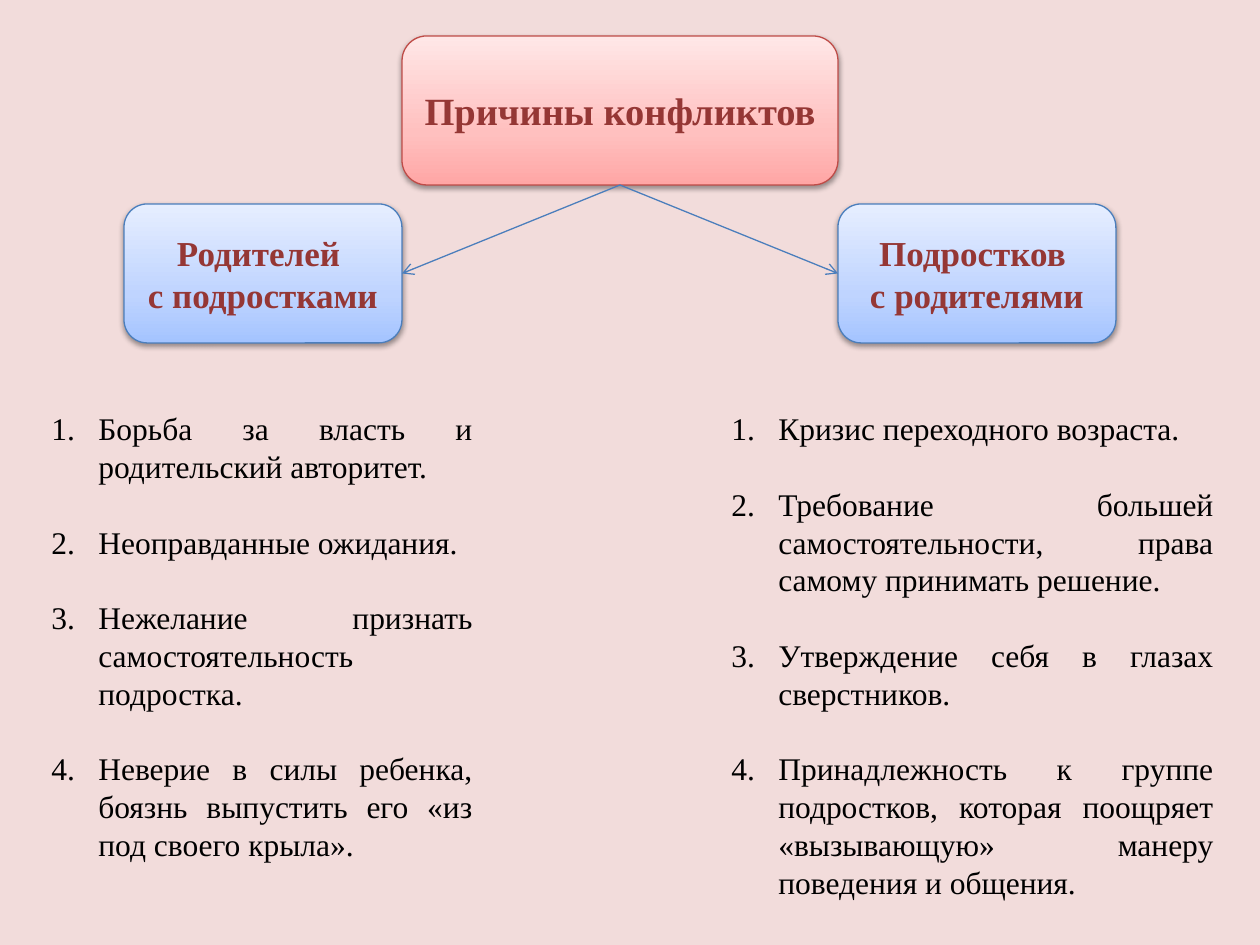
from dataclasses import dataclass

from lxml import etree
from pptx import Presentation
from pptx.dml.color import RGBColor
from pptx.enum import shapes, text
from pptx.oxml import parse_xml
from pptx.oxml.ns import nsdecls, qn
from pptx.util import Emu, Pt

EMU_PER_PX = 914400 / 126
FONT = "Times New Roman"
BACKGROUND, HEADING, BODY, BLUE_LINE, RED_LINE = "F2DCDB", "953735", "000000", "4B7EBC", "BF4C48"
BLUE_STOPS = ((0, "A4C4FF"), (35, "BFD4FF"), (100, "E6EEFF"))
RED_STOPS = ((0, "FFA6A5"), (35, "FFC0BF"), (100, "FFE7E7"))
INDENT = 47


@dataclass
class Card:
    left: int
    top: int
    width: int
    height: int
    lines: tuple[str, ...]
    size: int
    stops: tuple[tuple[int, str], ...]
    outline: str


@dataclass
class Reasons:
    left: int
    width: int
    height: int
    items: tuple[str, ...]


TOPIC = Card(402, 36, 436, 149, ("Причины конфликтов ",), 22, RED_STOPS, RED_LINE)
PARENTS = Card(124, 204, 278, 139, ("Родителей ", "с подростками"), 20, BLUE_STOPS, BLUE_LINE)
TEENS = Card(838, 204, 278, 139, ("Подростков ", "с родителями"), 20, BLUE_STOPS, BLUE_LINE)

REASONS = (
    Reasons(39, 446, 471, (
        "Борьба за власть и родительский авторитет.",
        "Неоправданные ожидания.",
        "Нежелание признать самостоятельность подростка.",
        "Неверие в силы ребенка, боязнь выпустить его «из под своего крыла».",
    )),
    Reasons(719, 507, 509, (
        "Кризис переходного возраста.",
        "Требование большей самостоятельности, права самому принимать решение.",
        "Утверждение себя в глазах сверстников.",
        "Принадлежность к группе подростков, которая поощряет «вызывающую» манеру "
        "поведения и общения.",
    )),
)


def px(length: int) -> Emu:
    return Emu(round(length * EMU_PER_PX))


def color(value: str) -> RGBColor:
    return RGBColor.from_string(value)


def write(frame, lines, size, value, alignment, bold=False) -> None:
    frame.text = "\n".join(lines)
    for para in frame.paragraphs:
        para.alignment = alignment
        for span in para.runs:
            span.font.name = FONT
            span.font.size = Pt(size)
            span.font.bold = bold
            span.font.color.rgb = color(value)


def add_soft_shadow(box) -> None:
    box.shadow.inherit = False
    effects = box._element.spPr.find(qn("a:effectLst"))
    effects.append(parse_xml(
        f'<a:outerShdw {nsdecls("a")} blurRad="40000" dist="20000" dir="5400000" rotWithShape="0">'
        '<a:srgbClr val="000000"><a:alpha val="38000"/></a:srgbClr></a:outerShdw>'))


def fill_gradient(box, stops) -> None:
    """Run the stops from the bottom of the box to its top."""
    box.fill.gradient()
    box.fill.gradient_angle = 90
    stop_list = box._element.spPr.find(qn("a:gradFill")).find(qn("a:gsLst"))
    for old_stop in list(stop_list):
        stop_list.remove(old_stop)
    for position, value in stops:
        stop = etree.SubElement(stop_list, qn("a:gs"), pos=str(position * 1000))
        etree.SubElement(stop, qn("a:srgbClr"), val=value)


def add_card(page, card: Card):
    box = page.shapes.add_shape(shapes.MSO_SHAPE.ROUNDED_RECTANGLE, px(card.left), px(card.top),
                                px(card.width), px(card.height))
    fill_gradient(box, card.stops)
    box.line.color.rgb = color(card.outline)
    box.line.width = Pt(0.75)
    add_soft_shadow(box)
    box.text_frame.vertical_anchor = text.MSO_ANCHOR.MIDDLE
    write(box.text_frame, card.lines, card.size, HEADING, text.PP_ALIGN.CENTER, bold=True)
    return box


def add_reasons(page, reasons: Reasons) -> None:
    box = page.shapes.add_textbox(px(reasons.left), px(403), px(reasons.width), px(reasons.height))
    frame = box.text_frame
    frame.word_wrap = True
    frame.auto_size = text.MSO_AUTO_SIZE.SHAPE_TO_FIT_TEXT
    write(frame, reasons.items, 18, BODY, text.PP_ALIGN.JUSTIFY)
    for index, para in enumerate(frame.paragraphs):
        para.line_spacing = Pt(21.6)
        para.space_before = Pt(21.6 if index else 0)
        properties = para._p.get_or_add_pPr()
        properties.set("marL", str(px(INDENT)))
        properties.set("indent", str(-px(INDENT)))
        etree.SubElement(properties, qn("a:buFont"), typeface="+mj-lt")
        etree.SubElement(properties, qn("a:buAutoNum"), type="arabicPeriod")


def add_arrow(page, source, target, side: int) -> None:
    """Lead from the bottom of source to the given side of target."""
    arrow = page.shapes.add_connector(shapes.MSO_CONNECTOR.STRAIGHT, 0, 0, 0, 0)
    arrow.begin_connect(source, 2)
    arrow.end_connect(target, side)
    arrow.line.color.rgb = color(BLUE_LINE)
    arrow.line.width = Pt(0.75)
    etree.SubElement(arrow.line._get_or_add_ln(), qn("a:tailEnd"), type="arrow")
    etree.SubElement(arrow._element.spPr, qn("a:effectLst"))


def main() -> None:
    deck = Presentation()
    deck.slide_width, deck.slide_height = px(1260), px(945)
    page = deck.slides.add_slide(deck.slide_layouts[6])
    page.background.fill.solid()
    page.background.fill.fore_color.rgb = color(BACKGROUND)

    parents, teens, topic = (add_card(page, card) for card in (PARENTS, TEENS, TOPIC))
    for reasons in REASONS:
        add_reasons(page, reasons)
    add_arrow(page, topic, parents, 3)
    add_arrow(page, topic, teens, 1)
    deck.save("out.pptx")


if __name__ == "__main__":
    main()
